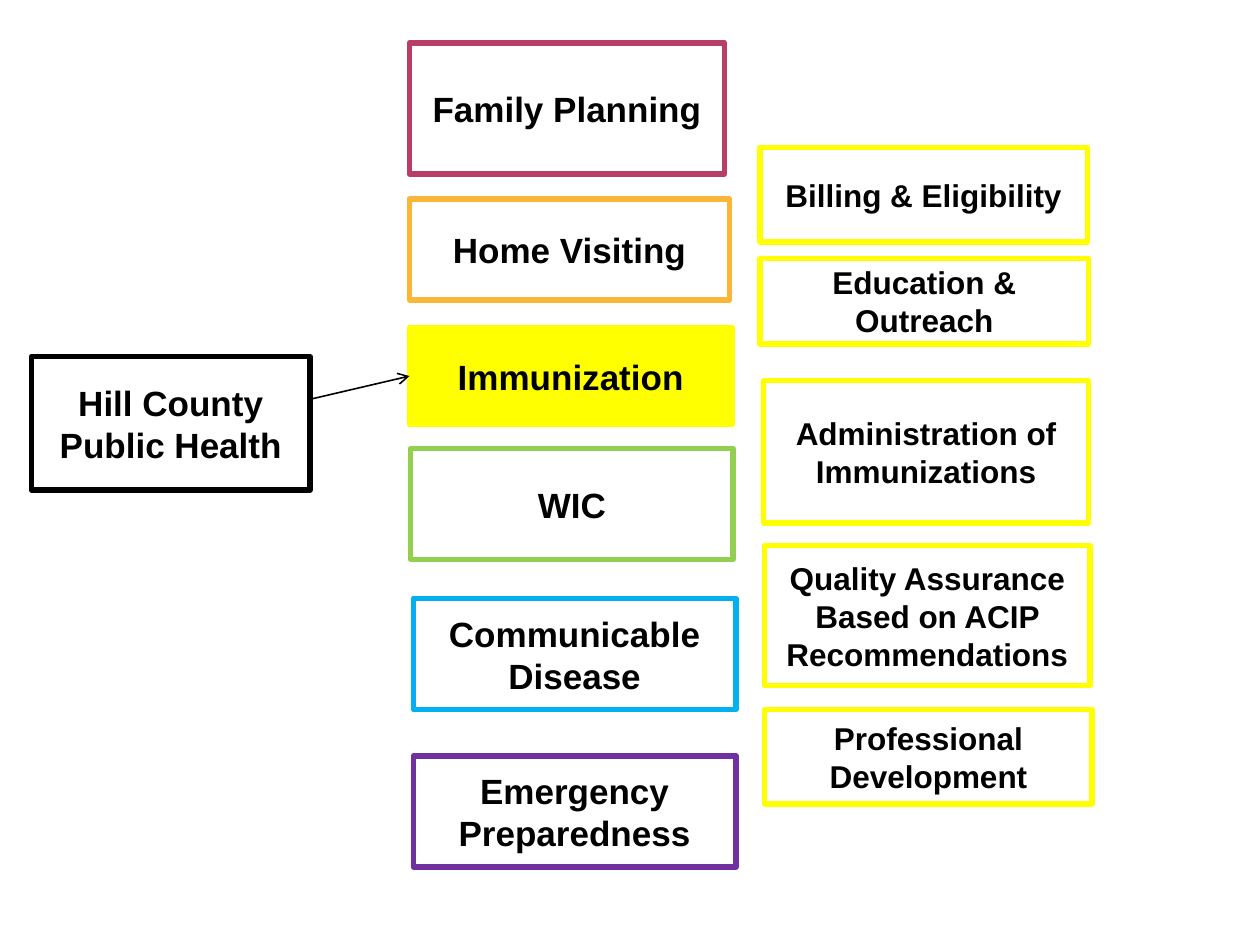
"""Build the Hill County Public Health programme chart."""
from lxml.etree import SubElement as Sub
from pptx import Presentation
from pptx.dml.color import RGBColor as Rgb
from pptx.enum.shapes import MSO_CONNECTOR as Link, MSO_SHAPE as Shape
from pptx.enum.text import MSO_ANCHOR as Anchor, PP_ALIGN as Align
from pptx.oxml.ns import qn
from pptx.util import Pt

BLACK, WHITE, YELLOW = "000000", "FFFFFF", "FFFF00"
UNITS = [
    ("Family Planning", (234, 24.5, 180, 74.9), "B83D68", WHITE),
    ("Home Visiting", (234, 113.8, 182.9, 57.6), "F9B639", WHITE),
    ("Immunization", (234, 187.2, 184.3, 55.4), YELLOW, YELLOW),
    ("WIC", (234.7, 256.3, 184.3, 63.4), "92D050", WHITE),
    ("Communicable Disease", (236.2, 342, 184.3, 63.4), "00B0F0", WHITE),
    ("Emergency Preparedness", (236.2, 432, 184.3, 63.4), "7030A0", WHITE),
]
TASKS = [
    ("Billing & Eligibility", (434.2, 84.2, 187.2, 54)),
    ("Education & Outreach", (434.2, 147.6, 187.9, 49)),
    ("Administration of Immunizations", (436.3, 217.4, 185.8, 81.4)),
    ("Quality Assurance Based on ACIP Recommendations",
     (437, 311.8, 185.8, 79.9)),
    ("Professional Development", (437, 405.4, 187.2, 54)),
]


def tint(part, code):
    part.color.rgb = Rgb.from_string(code)


class Chart:
    def __init__(self, slide):
        self.slide = slide
        self.style = {"name": "Arial", "bold": True}

    def box(self, text, area, edge, fill=WHITE, size=20):
        box = self.slide.shapes.add_shape(Shape.RECTANGLE, *map(Pt, area))
        box.shadow.inherit = False
        box.fill.solid()
        box.fill.fore_color.rgb = Rgb.from_string(fill)
        tint(box.line, edge)
        box.line.width = Pt(3.15)
        frame = box.text_frame
        frame.word_wrap = True
        frame.vertical_anchor = Anchor.MIDDLE
        para = frame.paragraphs[0]
        para.text = text
        para.alignment = Align.CENTER
        for key, value in {**self.style, "size": Pt(size)}.items():
            setattr(para.font, key, value)
        tint(para.font, BLACK)
        return box

    def arrow(self, start, goal):
        x, y = map(Pt, start)
        line = self.slide.shapes.add_connector(Link.STRAIGHT, x, y, x, y)
        line.end_connect(goal, 1)
        tint(line.line, BLACK)
        line.line.width = Pt(0.9)
        props = line._element.spPr
        Sub(props.find(qn("a:ln")), qn("a:tailEnd"), type="arrow")
        Sub(props, qn("a:effectLst"))


def main():
    deck = Presentation()
    deck.slide_width, deck.slide_height = Pt(720), Pt(540)
    chart = Chart(deck.slides.add_slide(deck.slide_layouts[6]))
    chart.box("Hill County Public Health", (18, 203.8, 159.1, 76.3), BLACK)
    units = {unit[0]: chart.box(*unit) for unit in UNITS}
    for text, area in TASKS:
        chart.box(text, area, YELLOW, size=18)
    chart.arrow((177.1, 228.2), units["Immunization"])
    deck.save("out.pptx")


if __name__ == "__main__":
    main()
